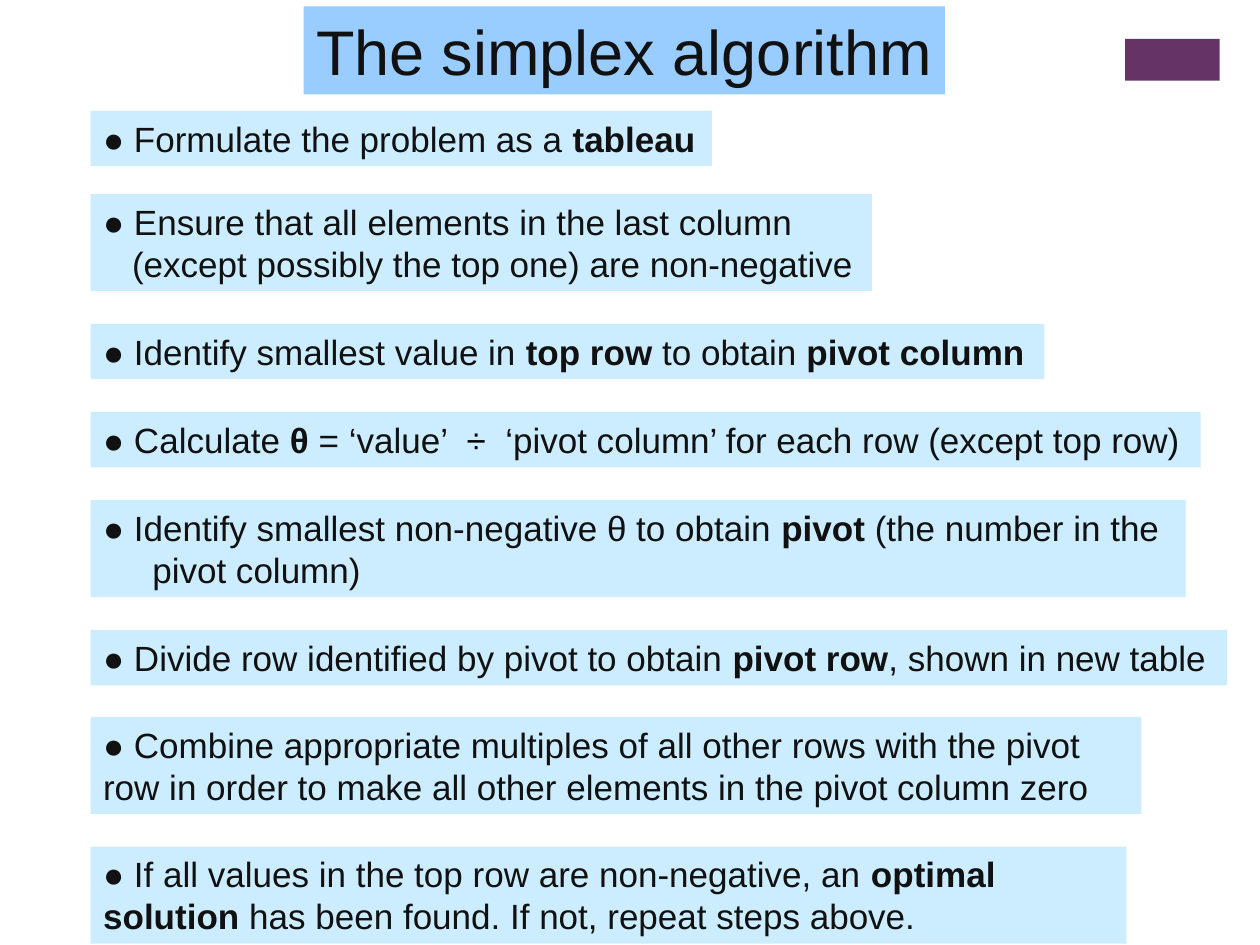
from dataclasses import dataclass

import pptx
import pptx.enum.shapes
import pptx.enum.text
import pptx.dml.color
import pptx.util
from pptx.util import Inches

COLORS = {
    "accent": "663366",
    "title": "99CCFF",
    "step": "CCECFF",
    "text": "111111",
    "sign": "000000",
}
FONT = "Arial"
STEP_LEFT = 0.72
LINE_HEIGHTS = {1: 0.44, 2: 0.77}


@dataclass
class Run:
    text: str
    bold: bool = False
    color: str = "text"


@dataclass
class Step:
    top: float
    width: float
    paragraphs: list[list[Run]]
    lines: int = 1
    wrap: bool = False
    hang: float = 0  # indent of the lines after the first


STEPS = [
    Step(0.88, 4.93, [[Run("● Formulate the problem as a "), Run("tableau", True)]]),
    Step(1.54, 6.2, [[Run("● Ensure that all elements in the last column")],
                     [Run("(except possibly the top one) are non-negative")]],
         lines=2, hang=0.23),
    Step(2.57, 7.57, [[Run("● Identify smallest value in "), Run("top row", True),
                       Run(" to obtain "), Run("pivot column", True)]]),
    Step(3.27, 8.81, [[Run("● Calculate "), Run("θ", True), Run(" = ‘value’  "),
                       Run("÷  ", color="sign"),
                       Run("‘pivot column’ for each row (except top row)")]]),
    Step(3.97, 8.69, [[Run("● Identify smallest non-negative θ to obtain "),
                       Run("pivot", True), Run(" (the number in the pivot column)")]],
         lines=2, wrap=True, hang=0.39),
    Step(5.0, 9.02, [[Run("● Divide row identified by pivot to obtain "),
                      Run("pivot row", True), Run(", shown in new table")]]),
    Step(5.69, 8.34, [[Run("● Combine appropriate multiples of all other rows with the "
                           "pivot row in order to make all other elements in the "
                           "pivot column zero")]],
         lines=2, wrap=True),
    Step(6.72, 8.22, [[Run("● If all values in the top row are non-negative, an "),
                       Run("optimal solution", True),
                       Run(" has been found. If not, repeat steps above.")]],
         lines=2, wrap=True),
]


def rgb(name: str) -> pptx.dml.color.RGBColor:
    return pptx.dml.color.RGBColor.from_string(COLORS[name])


def add_box(s, left: float, top: float, width: float, height: float, fill: str):
    """Add a plain filled rectangle."""
    sp = s.shapes.add_shape(pptx.enum.shapes.MSO_SHAPE.RECTANGLE, Inches(left),
                            Inches(top), Inches(width), Inches(height))
    sp.shadow.inherit = False
    sp.fill.solid()
    sp.fill.fore_color.rgb = rgb(fill)
    sp.line.fill.background()
    return sp


def add_text(sp, paragraphs: list[list[Run]], *, size: float, wrap: bool = False,
             hang: float = 0, middle: bool = False) -> None:
    """Fill a box with left-aligned paragraphs of formatted runs."""
    anchors = pptx.enum.text.MSO_ANCHOR
    tf = sp.text_frame
    tf.word_wrap = wrap
    tf.auto_size = pptx.enum.text.MSO_AUTO_SIZE.SHAPE_TO_FIT_TEXT
    tf.vertical_anchor = anchors.MIDDLE if middle else anchors.TOP
    for i, runs in enumerate(paragraphs):
        p = tf.add_paragraph() if i else tf.paragraphs[0]
        p.alignment = pptx.enum.text.PP_ALIGN.LEFT
        if hang:
            pPr = p._p.get_or_add_pPr()
            pPr.set("marL", str(Inches(hang)))
            pPr.set("indent", str(0 if i else -Inches(hang)))
        for run in runs:
            r = p.add_run()
            r.text = run.text
            r.font.name = FONT
            r.font.size = pptx.util.Pt(size)
            r.font.bold = run.bold
            r.font.color.rgb = rgb(run.color)


def add_step(s, step: Step) -> None:
    sp = add_box(s, STEP_LEFT, step.top, step.width, LINE_HEIGHTS[step.lines], "step")
    add_text(sp, step.paragraphs, size=20, wrap=step.wrap, hang=step.hang)


def main() -> None:
    prs = pptx.Presentation()
    prs.slide_width, prs.slide_height = Inches(10), Inches(7.5)
    s = prs.slides.add_slide(prs.slide_layouts[6])

    # Corner accent
    add_box(s, 8.93, 0.31, 0.75, 0.33, "accent")

    # Title
    title = add_box(s, 2.41, 0.05, 5.09, 0.7, "title")
    add_text(title, [[Run("The simplex algorithm")]], size=36, middle=True)

    # Steps of the algorithm
    for step in STEPS:
        add_step(s, step)

    prs.save("out.pptx")


if __name__ == "__main__":
    main()
